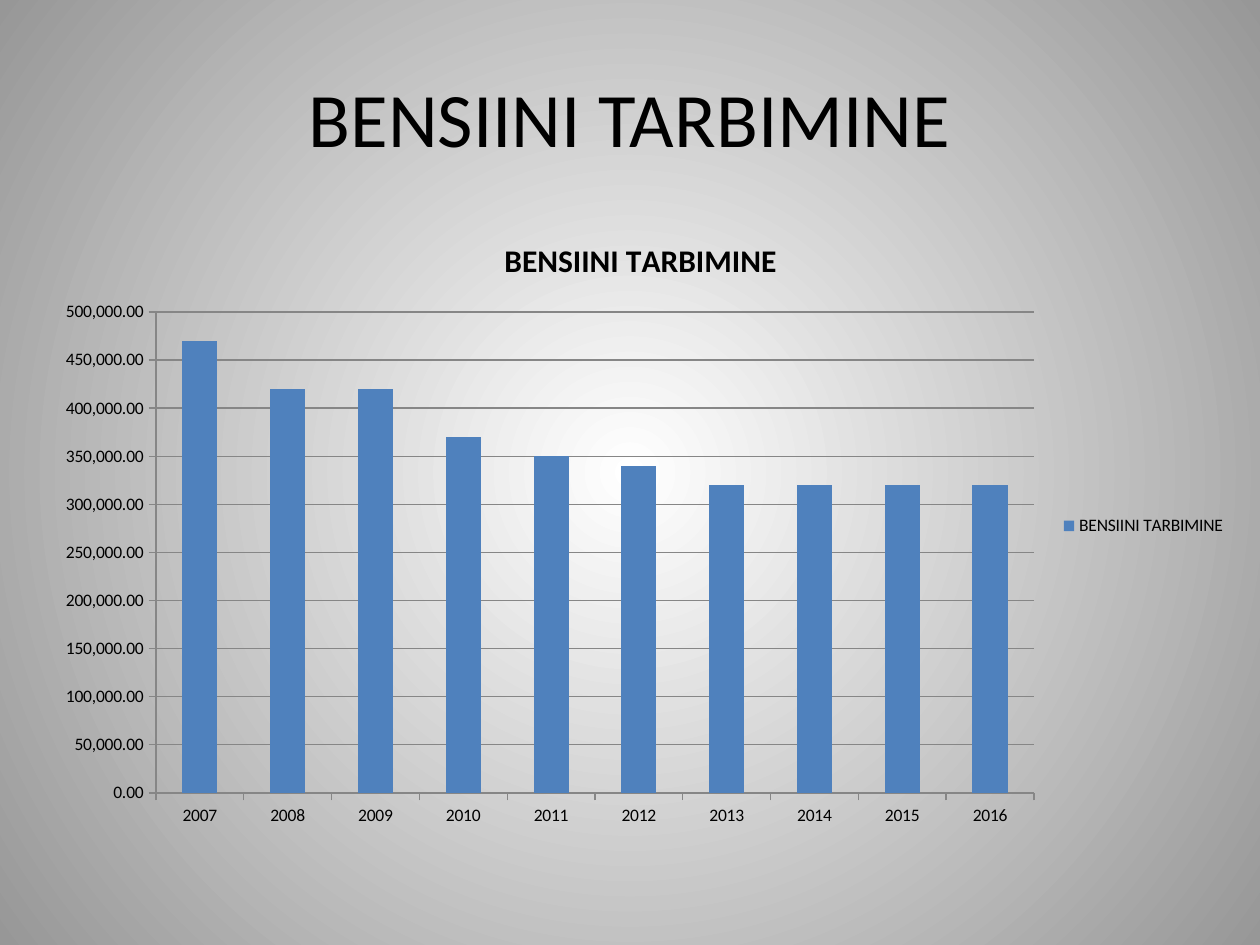
import lxml.etree
import pptx
import pptx.chart.data
import pptx.dml.color
import pptx.enum.chart
import pptx.enum.text
import pptx.oxml
import pptx.oxml.ns
import pptx.util

PX = 914400 // 126
FONT = "Calibri"
COLORS = {"text": "000000", "bar": "4F81BD", "line": "868686",
          "center": "FFFFFF", "edge": "979797"}
HEADING = "BENSIINI TARBIMINE"
CONSUMPTION = {
    "2007": 470000, "2008": 420000, "2009": 420000, "2010": 370000,
    "2011": 350000, "2012": 340000, "2013": 320000, "2014": 320000,
    "2015": 320000, "2016": 320000,
}


def rgb(name):
    return pptx.dml.color.RGBColor.from_string(COLORS[name])


def write_text(frame, text, size, bold=False, color="text"):
    paragraph = frame.paragraphs[0]
    paragraph.alignment = pptx.enum.text.PP_ALIGN.CENTER
    run = paragraph.add_run()
    run.text = text
    run.font.name = FONT
    run.font.size = pptx.util.Pt(size)
    run.font.bold = bold
    run.font.color.rgb = rgb(color)


presentation = pptx.Presentation()
presentation.slide_width = pptx.util.Inches(10)
presentation.slide_height = pptx.util.Inches(7.5)
slide = presentation.slides.add_slide(presentation.slide_layouts[6])

# Background: circular gradient, light in the middle
background = slide.background.fill
background.gradient()
for stop, name in zip(background.gradient_stops, ("center", "edge")):
    stop.color.rgb = rgb(name)
gradient = slide.element.xpath(".//p:bg//a:gradFill")[0]
gradient.remove(gradient.find(pptx.oxml.ns.qn("a:lin")))
circle = lxml.etree.SubElement(gradient, pptx.oxml.ns.qn("a:path"), {"path": "circle"})
lxml.etree.SubElement(circle, pptx.oxml.ns.qn("a:fillToRect"),
                      {side: "50000" for side in "ltrb"})

# Slide title
title = slide.shapes.add_textbox(63 * PX, 38 * PX, 1134 * PX, 157 * PX)
title.text_frame.word_wrap = True
title.text_frame.vertical_anchor = pptx.enum.text.MSO_ANCHOR.MIDDLE
write_text(title.text_frame, HEADING, size=44)

# Column chart
chart_data = pptx.chart.data.CategoryChartData(number_format="#,##0.00")
chart_data.categories = list(CONSUMPTION)
chart_data.add_series(HEADING, list(CONSUMPTION.values()))
chart = slide.shapes.add_chart(
    pptx.enum.chart.XL_CHART_TYPE.COLUMN_CLUSTERED,
    42 * PX, 214 * PX, 1197 * PX, 624 * PX, chart_data).chart
chart.font.name = FONT
chart.font.size = pptx.util.Pt(10)
chart.font.color.rgb = rgb("text")
chart.has_title = True
write_text(chart.chart_title.text_frame, HEADING, size=18, bold=True)
chart.has_legend = True
chart.legend.position = pptx.enum.chart.XL_LEGEND_POSITION.RIGHT
chart.legend.include_in_layout = False

plot = chart.plots[0]
plot.gap_width = 150
plot.vary_by_categories = False
columns = plot.series[0].format.fill
columns.solid()
columns.fore_color.rgb = rgb("bar")

# Axes and gridlines
chart.value_axis.minimum_scale = 0
chart.value_axis.maximum_scale = 500000
chart.value_axis.major_unit = 50000
chart.value_axis.has_major_gridlines = True
chart.value_axis.tick_labels.number_format = "#,##0.00"
chart.value_axis.tick_labels.number_format_is_linked = False
for axis in (chart.category_axis, chart.value_axis):
    axis.major_tick_mark = pptx.enum.chart.XL_TICK_MARK.OUTSIDE
for part in (chart.category_axis, chart.value_axis, chart.value_axis.major_gridlines):
    part.format.line.color.rgb = rgb("line")
    part.format.line.width = pptx.util.Pt(0.75)

# Inner plot area, as shares of the chart frame
plot_area = chart.element.xpath(".//c:plotArea")[0]
for old_layout in plot_area.findall(pptx.oxml.ns.qn("c:layout")):
    plot_area.remove(old_layout)
layout = lxml.etree.Element(pptx.oxml.ns.qn("c:layout"))
manual = lxml.etree.SubElement(layout, pptx.oxml.ns.qn("c:manualLayout"))
settings = {"layoutTarget": "inner", "xMode": "edge", "yMode": "edge",
            "x": 114 / 1197, "y": 98 / 624, "w": 878 / 1197, "h": 481 / 624}
for tag, value in settings.items():
    lxml.etree.SubElement(manual, pptx.oxml.ns.qn("c:" + tag), {"val": str(value)})
plot_area.insert(0, layout)

presentation.save("out.pptx")
